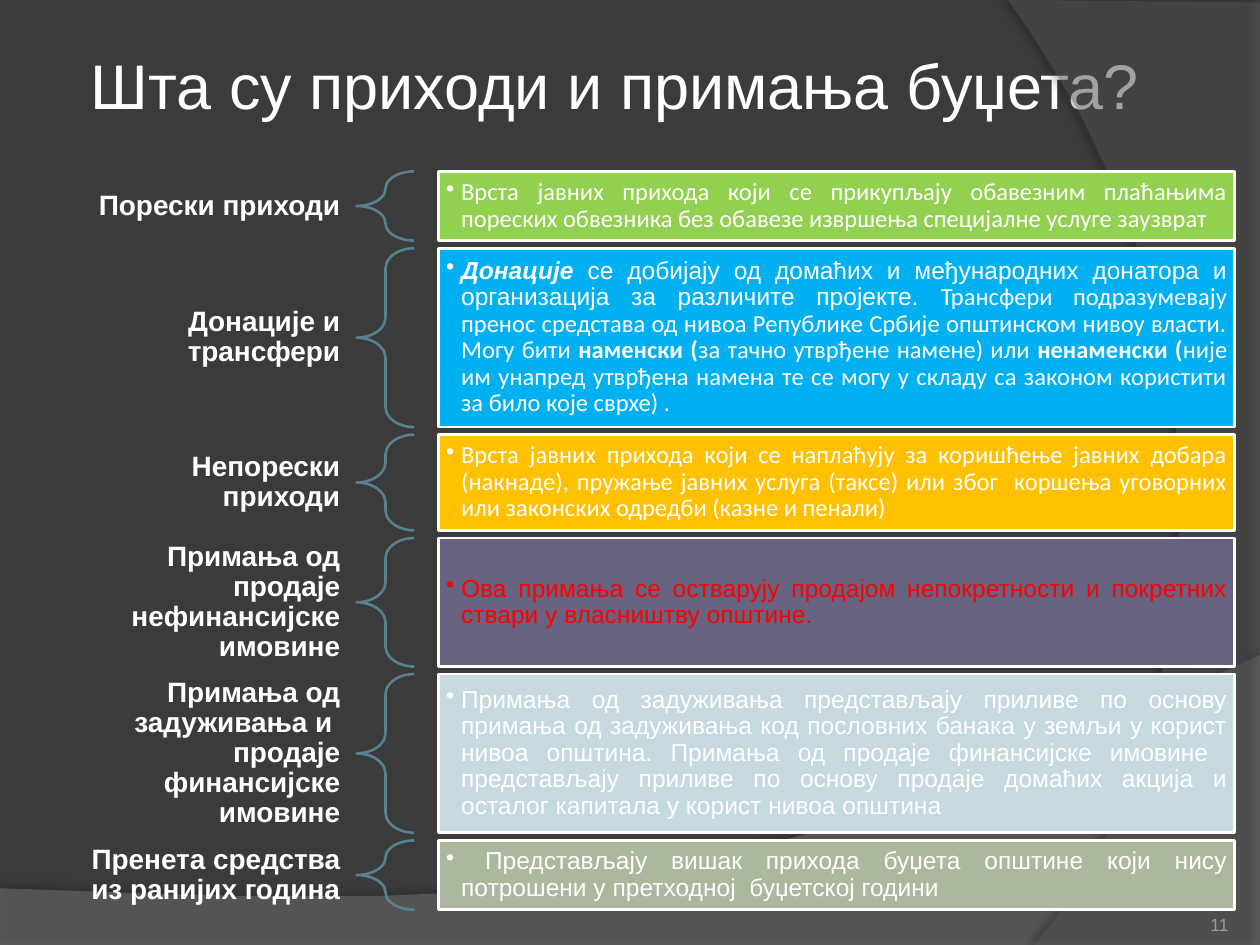
import pptx
import pptx.util
import pptx.dml.color
import pptx.enum.shapes
import pptx.enum.text
import pptx.oxml
import pptx.oxml.ns

PX = 9144  # EMU per px, 100 px to the inch
THEME = {
    "background": "3B3B3B", "wave": "7F7F7F", "arc": "5E5E5E",
    "text": "FFFFFF", "alert": "FF0000", "number": "9D9B9A", "brace": "58808D",
    "title_size": 36, "label_size": 16, "body_size": 14, "number_size": 10,
    "line": 1.5, "heading_font": "Arial", "body_font": "Calibri",
}
A_NS = pptx.oxml.ns.nsdecls("a")
rgb = pptx.dml.color.RGBColor.from_string
SHAPE = pptx.enum.shapes.MSO_SHAPE
ALIGN = pptx.enum.text.PP_ALIGN
ANCHOR = pptx.enum.text.MSO_ANCHOR


def format_run(run, size, color, font=THEME["heading_font"], bold=False, italic=False):
    run.font.size = pptx.util.Pt(size)
    run.font.name = font
    run.font.color.rgb = rgb(color)
    run.font.bold = bold
    run.font.italic = italic


def format_frame(frame, anchor, side, top):
    frame.word_wrap = True
    frame.vertical_anchor = anchor
    frame.margin_left = frame.margin_right = side * PX
    frame.margin_top = frame.margin_bottom = top * PX


deck = pptx.Presentation()
deck.slide_width, deck.slide_height = 1000 * PX, 750 * PX
slide = deck.slides.add_slide(deck.slide_layouts[5])  # title only
shapes = slide.shapes
slide.background.fill.solid()
slide.background.fill.fore_color.rgb = rgb(THEME["background"])

# Background swooshes: corners, then a Bezier edge from the last corner
# (corners, two controls and end, colour, opacity, shadow opacity, distance, angle)
swooshes = [
    ([(0, 705), (0, 750), (1000, 750), (1000, 520)],
     [(559, 729), (391, 719), (0, 705)], THEME["wave"], 45, 35, 3.5, 270),
    ([(1000, 2), (1000, 750), (821, 750)],
     [(935, 619), (1018, 300), (800, 0)], THEME["arc"], 40, 45, 4, 180),
]
STEPS = 40
for corners, curve, color, opacity, shadow_opacity, distance, angle in swooshes:
    bezier = [corners[-1]] + curve
    edge = []
    for step in range(1, STEPS + 1):
        t = step / STEPS
        weights = ((1 - t) ** 3, 3 * t * (1 - t) ** 2, 3 * t * t * (1 - t), t ** 3)
        edge.append(tuple(sum(w * point[axis] for w, point in zip(weights, bezier))
                          for axis in (0, 1)))
    outline = shapes.build_freeform(*corners[0], scale=PX)
    outline.add_line_segments(corners[1:] + edge, close=True)
    swoosh = outline.convert_to_shape()
    swoosh.fill.solid()
    swoosh.fill.fore_color.rgb = rgb(color)
    swoosh.line.fill.background()
    swoosh.fill._xPr.find(".//" + pptx.oxml.ns.qn("a:srgbClr")).append(
        pptx.oxml.parse_xml(f'<a:alpha {A_NS} val="{opacity * 1000}"/>'))
    swoosh._element.spPr.append(pptx.oxml.parse_xml(
        f'<a:effectLst {A_NS}><a:outerShdw blurRad="{pptx.util.Pt(4)}" '
        f'dist="{pptx.util.Pt(distance)}" dir="{angle * 60000}" rotWithShape="0">'
        f'<a:srgbClr val="000000"><a:alpha val="{shadow_opacity * 1000}"/></a:srgbClr>'
        '</a:outerShdw></a:effectLst>'))

# Title
title = shapes.title
title.left, title.top, title.width, title.height = 67 * PX, 42 * PX, 900 * PX, 50 * PX
title.text_frame.text = "Шта су приходи и примања буџета?"
format_frame(title.text_frame, ANCHOR.MIDDLE, 5, 5)
title.text_frame.paragraphs[0].alignment = ALIGN.LEFT
format_run(title.text_frame.paragraphs[0].runs[0], THEME["title_size"], THEME["text"])

# Revenue kinds: label, height, fill, text colour, runs of (text, font, bold, italic)
HEADING, BODY = THEME["heading_font"], THEME["body_font"]
WHITE = THEME["text"]
revenues = [
    ("Порески приходи", 55, "92D050", WHITE, [
        ("Врста јавних прихода који се прикупљају обавезним плаћањима пореских "
         "обвезника без обавезе извршења специјалне услуге заузврат", BODY, False, False)]),
    ("Донације и трансфери", 142, "00B0F0", WHITE, [
        ("Донације ", HEADING, True, True),
        ("се добијају од домаћих и међународних донатора и организација за "
         "различите пројекте. ", HEADING, False, False),
        ("Трансфери подразумевају пренос средстава од нивоа Републике Србије "
         "општинском нивоу власти. Могу бити ", BODY, False, False),
        ("наменски (", BODY, True, False),
        ("за тачно утврђене намене) или ", BODY, False, False),
        ("ненаменски (", BODY, True, False),
        ("није им унапред утврђена намена те се могу у складу са законом "
         "користити за било које сврхе) .", BODY, False, False)]),
    ("Непорески приходи", 76, "FFC000", WHITE, [
        ("Врста јавних прихода који се наплаћују за коришћење јавних добара "
         "(накнаде), пружање јавних услуга (таксе) или због  коршења уговорних "
         "или законских одредби (казне и пенали)", BODY, False, False)]),
    ("Примања од продаје нефинансијске имовине", 102, "67627F", THEME["alert"], [
        ("Ова примања се остварују продајом непокретности и покретних ствари у "
         "власништву општине.", HEADING, False, False)]),
    ("Примања од задуживања и  продаје финансијске имовине", 126, "C5D9DF", WHITE, [
        ("Примања од задуживања представљају приливе по основу примања од "
         "задуживања код пословних банака у земљи у корист нивоа општина. "
         "Примања од продаје финансијске имовине  представљају приливе по основу "
         "продаје домаћих акција и осталог капитала у корист нивоа општина",
         HEADING, False, False)]),
    ("Пренета средства из ранијих година", 55, "ACB89D", WHITE, [
        (" Представљају вишак прихода буџета општине који нису потрошени у "
         "претходној  буџетској години", HEADING, False, False)]),
]
ROW_GAP = 6
top = 136
for name, height, fill, color, pieces in revenues:
    # Label on the left
    label = shapes.add_textbox(50 * PX, top * PX, 232 * PX, height * PX)
    label.text_frame.text = name
    format_frame(label.text_frame, ANCHOR.MIDDLE, 12, 4)
    label_line = label.text_frame.paragraphs[0]
    label_line.alignment = ALIGN.RIGHT
    label_line.line_spacing = 0.9
    format_run(label_line.runs[0], THEME["label_size"], WHITE, bold=True)

    # Brace
    brace = shapes.add_shape(SHAPE.LEFT_BRACE, 283 * PX, top * PX, 46 * PX, height * PX)
    brace.adjustments[0] = 0.35
    brace.adjustments[1] = 0.5
    brace.shadow.inherit = False
    brace.fill.background()
    brace.line.color.rgb = rgb(THEME["brace"])
    brace.line.width = pptx.util.Pt(THEME["line"])

    # Explanation panel
    panel = shapes.add_shape(SHAPE.RECTANGLE, 348 * PX, top * PX, 632 * PX, height * PX)
    panel.shadow.inherit = False
    panel.fill.solid()
    panel.fill.fore_color.rgb = rgb(fill)
    panel.line.color.rgb = rgb(WHITE)
    panel.line.width = pptx.util.Pt(THEME["line"])
    format_frame(panel.text_frame, ANCHOR.MIDDLE, 6, 6)
    explanation = panel.text_frame.paragraphs[0]
    explanation.level = 1
    explanation.alignment = ALIGN.JUSTIFY
    explanation.line_spacing = 0.9
    for text, font, bold, italic in pieces:
        piece = explanation.add_run()
        piece.text = text
        format_run(piece, THEME["body_size"], color, font, bold, italic)
    bullet = explanation._p.get_or_add_pPr()
    bullet.set("marL", str(12 * PX))
    bullet.set("indent", str(-12 * PX))
    bullet.append(pptx.oxml.parse_xml(f'<a:buChar {A_NS} char="•"/>'))

    top += height + ROW_GAP

# Slide number
number = shapes.add_textbox(892 * PX, 702 * PX, 83 * PX, 40 * PX)
number.text_frame.text = "11"
format_frame(number.text_frame, ANCHOR.BOTTOM, 0, 0)
number.text_frame.paragraphs[0].alignment = ALIGN.RIGHT
format_run(number.text_frame.paragraphs[0].runs[0], THEME["number_size"], THEME["number"])

deck.save("out.pptx")
